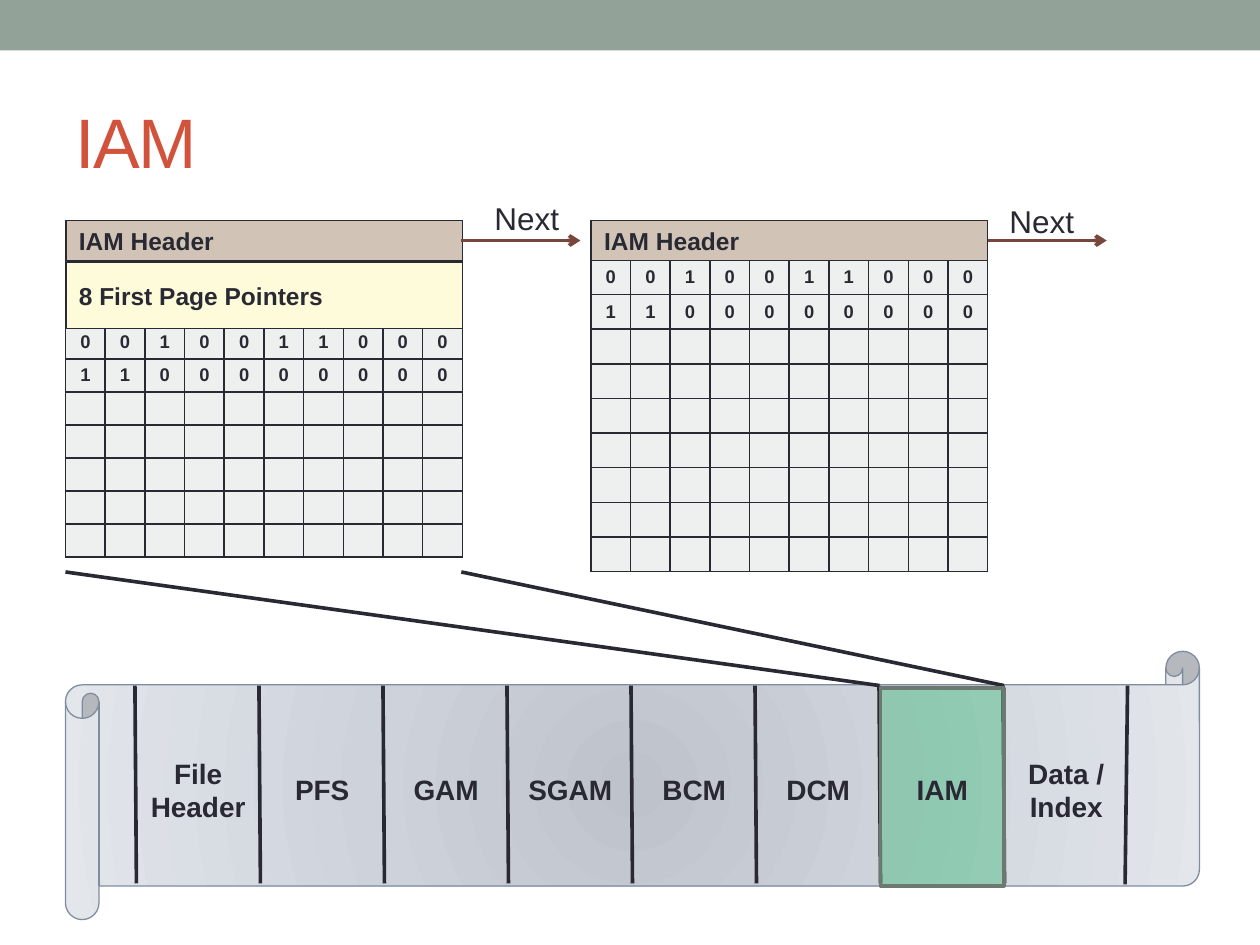
"""Build the slide that shows how IAM pages chain and where they sit in a data file."""
import pptx
import pptx.dml.color
import pptx.enum.shapes
import pptx.enum.text
import pptx.oxml
import pptx.oxml.ns
import pptx.util
from lxml import etree

Cm, Pt = pptx.util.Cm, pptx.util.Pt
RGBColor = pptx.dml.color.RGBColor
SHAPE = pptx.enum.shapes.MSO_SHAPE
ALIGN = pptx.enum.text.PP_ALIGN
ANCHOR = pptx.enum.text.MSO_ANCHOR
qn = pptx.oxml.ns.qn

INK = RGBColor(0x29, 0x29, 0x34)
SAGE = RGBColor(0x93, 0xA2, 0x99)
RUST = RGBColor(0xD2, 0x53, 0x3C)
TAN = RGBColor(0xD1, 0xC4, 0xB6)
CREAM = RGBColor(0xFD, 0xFB, 0xDA)
CELL = RGBColor(0xEE, 0xF0, 0xEF)
GREEN = RGBColor(0x00, 0xB0, 0x50)
GREY = RGBColor(0x6D, 0x78, 0x71)
SLATE = RGBColor(0x80, 0x8D, 0xA0)
BROWN = RGBColor(0x79, 0x46, 0x3D)
SCROLL_STOPS = [
    (0, RGBColor(0xBE, 0xC3, 0xCB)),
    (45, RGBColor(0xCD, 0xD2, 0xDB)),
    (100, RGBColor(0xE3, 0xE6, 0xEB)),
]

BITS = ["0010011000", "1100000000"]
PAGES = ["File\nHeader", "PFS", "GAM", "SGAM", "BCM", "DCM", "IAM", "Data / Index"]
COLUMNS, ROWS, HEADER_ROW = 10, 10, 0.79
PAGE_STEP = 2.5


class Deck:
    """Hold the current slide and draw each kind of element in one style."""

    font = "Arial"
    thick = 2.08
    thin = 0.75

    def __init__(self):
        self.prs = pptx.Presentation()
        self.prs.slide_width, self.prs.slide_height = Cm(25.4), Cm(19.05)
        self.s = self.prs.slides.add_slide(self.prs.slide_layouts[5])

    def style(self, p, size, bold=False, color=INK, align=ALIGN.LEFT):
        p.alignment = align
        p.font.name, p.font.size, p.font.bold = self.font, Pt(size), bold
        p.font.color.rgb = color

    def title(self, text, x, y, w, h):
        sp = self.s.shapes.title
        sp.left, sp.top, sp.width, sp.height = Cm(x), Cm(y), Cm(w), Cm(h)
        tf = sp.text_frame
        tf.text, tf.vertical_anchor = text, ANCHOR.MIDDLE
        p = tf.paragraphs[0]
        self.style(p, 40, color=RUST)
        p.runs[0]._r.get_or_add_rPr().set("spc", "-100")

    def shape(self, kind, x, y, w, h, fill, line=None, weight=thin):
        sp = self.s.shapes.add_shape(kind, Cm(x), Cm(y), Cm(w), Cm(h))
        sp.shadow.inherit = False
        sp.fill.solid()
        sp.fill.fore_color.rgb = fill
        if line is None:
            sp.line.fill.background()
        else:
            sp.line.color.rgb, sp.line.width = line, Pt(weight)
        return sp

    def banner(self, text, x, y, w, h, fill, anchor):
        tf = self.shape(SHAPE.RECTANGLE, x, y, w, h, fill, INK).text_frame
        tf.margin_top = tf.margin_bottom = Cm(0.1)
        tf.text, tf.vertical_anchor = text, anchor
        self.style(tf.paragraphs[0], 14, bold=True)

    def scroll(self, x, y, w, h):
        sp = self.shape(SHAPE.HORIZONTAL_SCROLL, x, y, w, h, CELL, SLATE)
        stops = "".join(
            f'<a:gs pos="{pos * 1000}"><a:srgbClr val="{color}"/></a:gs>'
            for pos, color in SCROLL_STOPS)
        grad = pptx.oxml.parse_xml(
            f'<a:gradFill {pptx.oxml.ns.nsdecls("a")}><a:gsLst>{stops}</a:gsLst>'
            '<a:path path="circle"><a:fillToRect l="50000" t="50000" r="50000" b="50000"/>'
            '</a:path></a:gradFill>')
        spPr = sp._element.spPr
        spPr.replace(spPr.find(qn("a:solidFill")), grad)

    def highlight(self, x, y, w, h):
        sp = self.shape(SHAPE.RECTANGLE, x, y, w, h, GREEN, GREY, self.thick)
        color = sp._element.spPr.find(qn("a:solidFill"))[0]
        etree.SubElement(color, qn("a:alpha"), val="30000")

    def line(self, x1, y1, x2, y2, color=INK, arrow=False):
        c = self.s.shapes.add_connector(
            pptx.enum.shapes.MSO_CONNECTOR.STRAIGHT, Cm(x1), Cm(y1), Cm(x2), Cm(y2))
        c.line.color.rgb, c.line.width = color, Pt(self.thick)
        if arrow:
            etree.SubElement(c.line._get_or_add_ln(), qn("a:tailEnd"), type="arrow")
        etree.SubElement(c._element.spPr, qn("a:effectLst"))

    def label(self, text, x, y, w, h, size, bold=False, anchor=ANCHOR.TOP):
        tf = self.s.shapes.add_textbox(Cm(x), Cm(y), Cm(w), Cm(h)).text_frame
        tf.word_wrap, tf.vertical_anchor = True, anchor
        tf.text = text
        for p in tf.paragraphs:
            self.style(p, size, bold, align=ALIGN.CENTER)

    def bitmap(self, x, y, w, h, first):
        gf = self.s.shapes.add_table(ROWS, COLUMNS, Cm(x), Cm(y), Cm(w), Cm(h))
        tbl = gf.table
        tbl.first_row = tbl.horz_banding = False
        for col in tbl.columns:
            col.width = Cm(w / COLUMNS)
        for i, row in enumerate(tbl.rows):
            row.height = Cm((h - HEADER_ROW) / (ROWS - 1) if i else HEADER_ROW)
            bits = BITS[i - first] if 0 <= i - first < len(BITS) else [""] * COLUMNS
            for cell, bit in zip(row.cells, bits):
                self.cell(cell, bit)

    def cell(self, cell, text):
        cell.fill.solid()
        cell.fill.fore_color.rgb = CELL
        cell.vertical_anchor = ANCHOR.MIDDLE
        cell.margin_left = cell.margin_right = cell.margin_top = cell.margin_bottom = 0
        p = cell.text_frame.paragraphs[0]
        if text:
            p.text = text
        else:
            p._p.get_or_add_endParaRPr().set("sz", "1050")
        self.style(p, 10.5, bold=True, align=ALIGN.CENTER)
        for i, side in enumerate("LRTB"):
            cell._tc.tcPr.insert(i, pptx.oxml.parse_xml(
                f'<a:ln{side} {pptx.oxml.ns.nsdecls("a")} w="12700"><a:solidFill>'
                f'<a:srgbClr val="{INK}"/></a:solidFill></a:ln{side}>'))


def main():
    d = Deck()
    d.shape(SHAPE.RECTANGLE, 0, 0, 25.4, 1.02, SAGE)
    d.title("IAM", 1.27, 1.47, 22.86, 2.74)

    d.scroll(1.32, 13.13, 22.86, 5.41)
    for i in range(len(PAGES)):
        x = 2.72 + i * PAGE_STEP
        d.line(x, 13.82, x + 0.03, 17.81)
    d.line(22.73, 13.82, 22.68, 17.83)
    d.line(17.73, 13.82, 1.32, 11.53)
    d.line(20.24, 13.82, 9.3, 11.53)
    d.highlight(17.75, 13.87, 2.49, 3.99)
    for i, page in enumerate(PAGES):
        h = 1.63 if len(page.split()) > 1 else 0.94
        d.label(page, 2.74 + i * PAGE_STEP, 15.92 - h / 2, 2.51, h, 16, True, ANCHOR.MIDDLE)

    for x, h, first, arrow_x, next_x, next_y in [
            (1.32, 6.78, 3, 9.3, 9.53, 3.89), (11.91, 7.08, 1, 19.91, 19.91, 3.94)]:
        d.bitmap(x, 4.45, 8, h, first)
        d.banner("IAM Header", x + 0.02, 4.45, 7.98, 0.81, TAN, ANCHOR.TOP)
        d.line(arrow_x, 4.85, arrow_x + 2.4, 4.85, BROWN, arrow=True)
        d.label("Next", next_x, next_y, 2.18, 1.02, 18)
    d.banner("8 First Page Pointers", 1.34, 5.28, 7.98, 1.35, CREAM, ANCHOR.MIDDLE)
    d.prs.save("out.pptx")


if __name__ == "__main__":
    main()
